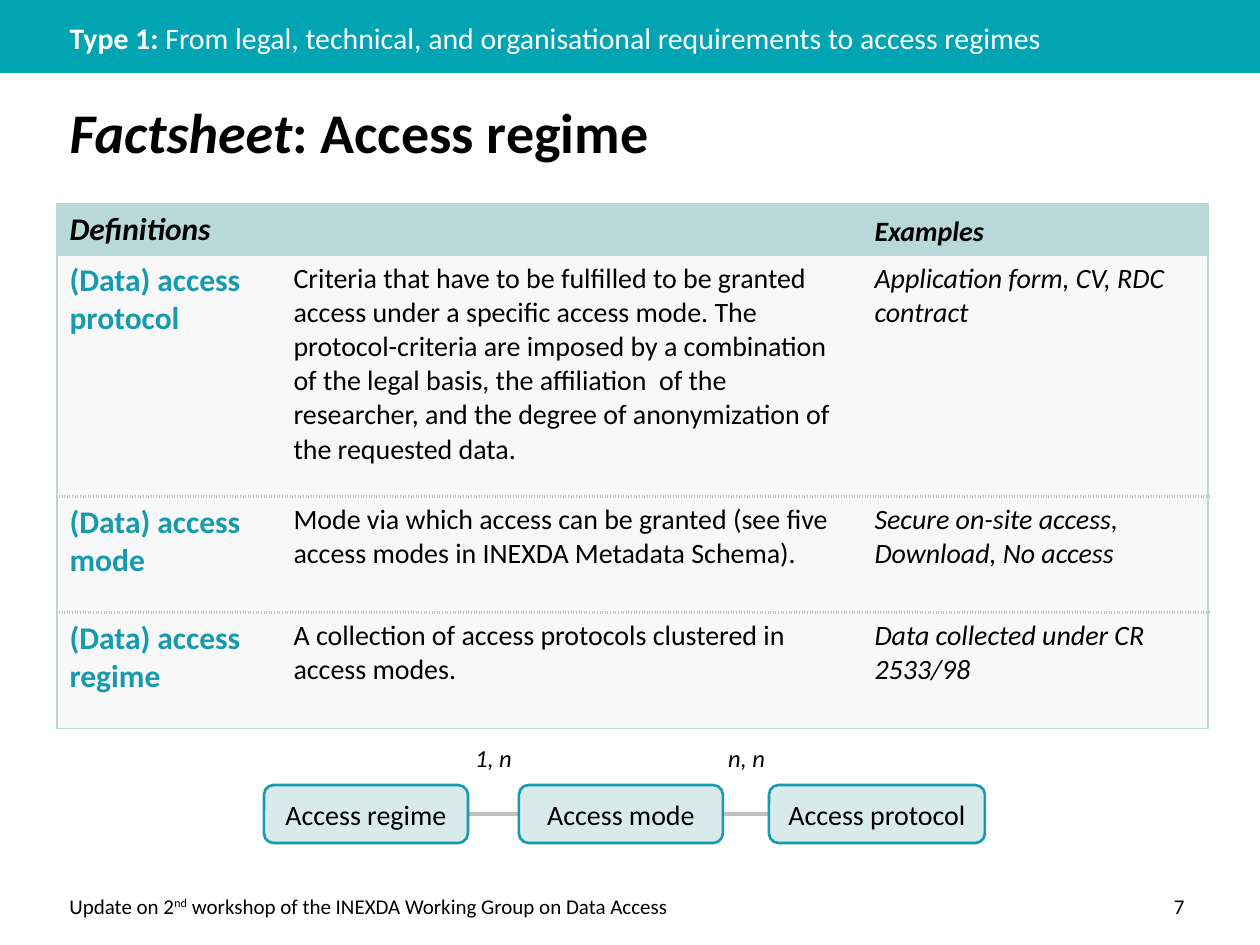
from dataclasses import dataclass

from lxml import etree
from pptx import Presentation
from pptx.dml.color import RGBColor
from pptx.enum.shapes import MSO_CONNECTOR, MSO_SHAPE
from pptx.enum.text import MSO_ANCHOR, MSO_AUTO_SIZE, PP_ALIGN
from pptx.oxml.ns import qn
from pptx.util import Emu, Pt

RECTANGLE, ROUNDED = MSO_SHAPE.RECTANGLE, MSO_SHAPE.ROUNDED_RECTANGLE
STRAIGHT = MSO_CONNECTOR.STRAIGHT
TOP, MIDDLE, BOTTOM = MSO_ANCHOR.TOP, MSO_ANCHOR.MIDDLE, MSO_ANCHOR.BOTTOM
LEFT, CENTER, RIGHT = PP_ALIGN.LEFT, PP_ALIGN.CENTER, PP_ALIGN.RIGHT
NO_AUTOFIT = MSO_AUTO_SIZE.NONE

FONT = "Calibri"
BLACK, WHITE = "000000", "FFFFFF"
BAND, ACCENT, PALE = "00A4B3", "169AAF", "D9EAEB"
HEADER, BODY, GREY = "B8D8DA", "F8F8F8", "BFBFBF"
SOLID_BORDER, DOTTED_BORDER = (HEADER, 1, "solid"), (GREY, 2.25, "sysDot")

COLUMNS = (224, 581, 346)
ROWS = (50, 241, 116, 116)
MARGIN = 57
NODE_TOP, NODE_HEIGHT = 785, 58


@dataclass
class Span:
    text: str
    size: float
    color: str = BLACK
    bold: bool = False
    italic: bool = False
    baseline: int = 0


@dataclass
class Node:
    label: str
    left: int
    width: int


@dataclass
class Definition:
    term: str
    meaning: str
    example: str


DEFINITIONS = (
    Definition(
        "(Data) access protocol",
        "Criteria that have to be fulfilled to be granted access under a specific "
        "access mode. The protocol-criteria are imposed by a combination of the "
        "legal basis, the affiliation  of the researcher, and the degree of "
        "anonymization of the requested data.",
        "Application form, CV, RDC contract"),
    Definition(
        "(Data) access mode",
        "Mode via which access can be granted (see five access modes in INEXDA "
        "Metadata Schema).",
        "Secure on-site access, Download, No access"),
    Definition(
        "(Data) access regime",
        "A collection of access protocols clustered in access modes.",
        "Data collected under CR 2533/98"),
)
NODES = (
    Node("Access regime", 264, 204),
    Node("Access mode", 519, 204),
    Node("Access protocol", 769, 216),
)
CARDINALITIES = ("1, n", "n, n")


def px(length: int) -> Emu:
    return Emu(round(length * 914400 / 126))


def rgb(color: str) -> RGBColor:
    return RGBColor.from_string(color)


def write(frame, spans: list[Span], align=LEFT) -> None:
    para = frame.paragraphs[0]
    para.alignment = align
    para.space_before = Pt(0)
    for item in spans:
        span = para.add_run()
        span.text = item.text
        font = span.font
        font.name, font.size = FONT, Pt(item.size)
        font.bold, font.italic = item.bold, item.italic
        font.color.rgb = rgb(item.color)
        if item.baseline:
            font._element.set("baseline", str(item.baseline * 1000))


def fill_placeholder(holder, area: tuple, spans: list[Span]) -> None:
    holder.left, holder.top, holder.width, holder.height = map(px, area)
    frame = holder.text_frame
    frame.auto_size, frame.vertical_anchor = NO_AUTOFIT, MIDDLE
    write(frame, spans)


def add_text(page, area: tuple, spans: list[Span], align=LEFT, anchor=TOP) -> None:
    frame = page.shapes.add_textbox(*map(px, area)).text_frame
    frame.word_wrap, frame.vertical_anchor = True, anchor
    write(frame, spans, align)


def add_box(page, kind, area: tuple, fill: str, line: str | None = None):
    box = page.shapes.add_shape(kind, *map(px, area))
    box.shadow.inherit = False
    box.fill.solid()
    box.fill.fore_color.rgb = rgb(fill)
    if line:
        box.line.color.rgb = rgb(line)
        box.line.width = Pt(1.5)
    else:
        box.line.fill.background()
    return box


def set_borders(cell, borders: dict) -> None:
    """Draw the given sides and clear the others."""
    properties = cell._tc.get_or_add_tcPr()
    for index, side in enumerate("LRTB"):
        line = etree.Element(qn(f"a:ln{side}"))
        properties.insert(index, line)
        if side not in borders:
            etree.SubElement(line, qn("a:noFill"))
            continue
        color, width, dash = borders[side]
        line.set("w", str(Pt(width)))
        paint = etree.SubElement(line, qn("a:solidFill"))
        etree.SubElement(paint, qn("a:srgbClr"), val=color)
        etree.SubElement(line, qn("a:prstDash"), val=dash)


def cell_borders(row: int, column: int) -> dict:
    borders = {"T": DOTTED_BORDER if row > 1 else SOLID_BORDER,
               "B": DOTTED_BORDER if 0 < row < len(ROWS) - 1 else SOLID_BORDER}
    if column == 0:
        borders["L"] = SOLID_BORDER
    if column == len(COLUMNS) - 1:
        borders["R"] = SOLID_BORDER
    return borders


def add_definitions(page) -> None:
    table = page.shapes.add_table(len(ROWS), len(COLUMNS), px(MARGIN), px(204),
                                  px(sum(COLUMNS)), px(sum(ROWS))).table
    table.first_row = table.horz_banding = False
    for column, width in zip(table.columns, COLUMNS):
        column.width = px(width)
    for row, height in zip(table.rows, ROWS):
        row.height = px(height)

    content = [(Span("Definitions", 18, bold=True, italic=True), None,
                Span("Examples", 16, bold=True, italic=True))]
    content += [(Span(entry.term, 18, ACCENT, bold=True), Span(entry.meaning, 16),
                 Span(entry.example, 16, italic=True)) for entry in DEFINITIONS]
    for r, spans in enumerate(content):
        for c, span in enumerate(spans):
            cell = table.cell(r, c)
            cell.fill.solid()
            cell.fill.fore_color.rgb = rgb(BODY if r else HEADER)
            set_borders(cell, cell_borders(r, c))
            if r:
                cell.margin_bottom = px(30)
            elif c == 2:
                cell.vertical_anchor = BOTTOM
            if span:
                write(cell.text_frame, [span])


def add_diagram(page) -> None:
    middle = NODE_TOP + NODE_HEIGHT // 2
    for start, end, label in zip(NODES, NODES[1:], CARDINALITIES):
        left, right = start.left + start.width, end.left
        link = page.shapes.add_connector(STRAIGHT, px(left), px(middle),
                                         px(right), px(middle))
        link.line.color.rgb = rgb(GREY)
        link.line.width = Pt(2)
        etree.SubElement(link._element.spPr, qn("a:effectLst"))
        add_text(page, ((left + right) // 2 - 33, 741, 67, 34),
                 [Span(label, 14, italic=True)], CENTER, MIDDLE)
    for node in NODES:
        box = add_box(page, ROUNDED, (node.left, NODE_TOP, node.width, NODE_HEIGHT),
                      PALE, ACCENT)
        box.text_frame.vertical_anchor = MIDDLE
        write(box.text_frame, [Span(node.label, 16)], CENTER)


def main() -> None:
    deck = Presentation()
    deck.slide_width, deck.slide_height = px(1260), px(945)
    page = deck.slides.add_slide(deck.slide_layouts[1])

    band = add_box(page, RECTANGLE, (0, 0, 1260, 73), BAND)
    page.shapes._spTree.insert(2, band._element)  # behind the placeholders
    fill_placeholder(page.shapes.title, (MARGIN, 89, 1140, 84),
                     [Span("Factsheet", 32, bold=True, italic=True),
                      Span(": Access regime", 32, bold=True)])
    heading = page.placeholders[1]
    properties = heading.text_frame.paragraphs[0]._p.get_or_add_pPr()
    properties.set("marL", "0")
    properties.set("indent", "0")
    etree.SubElement(properties, qn("a:buNone"))
    fill_placeholder(heading, (MARGIN, 10, 1045, 55),
                     [Span("Type 1: ", 17, WHITE, bold=True),
                      Span("From legal, technical, and organisational requirements "
                           "to access regimes", 17, WHITE)])

    add_definitions(page)
    add_diagram(page)
    add_text(page, (MARGIN, 887, 1014, 39),
             [Span("Update on 2", 12), Span("nd", 12, baseline=30),
              Span(" workshop of the INEXDA Working Group on Data Access", 12)])
    add_text(page, (1089, 887, 108, 39), [Span("7", 12)], RIGHT)
    deck.save("out.pptx")


if __name__ == "__main__":
    main()
